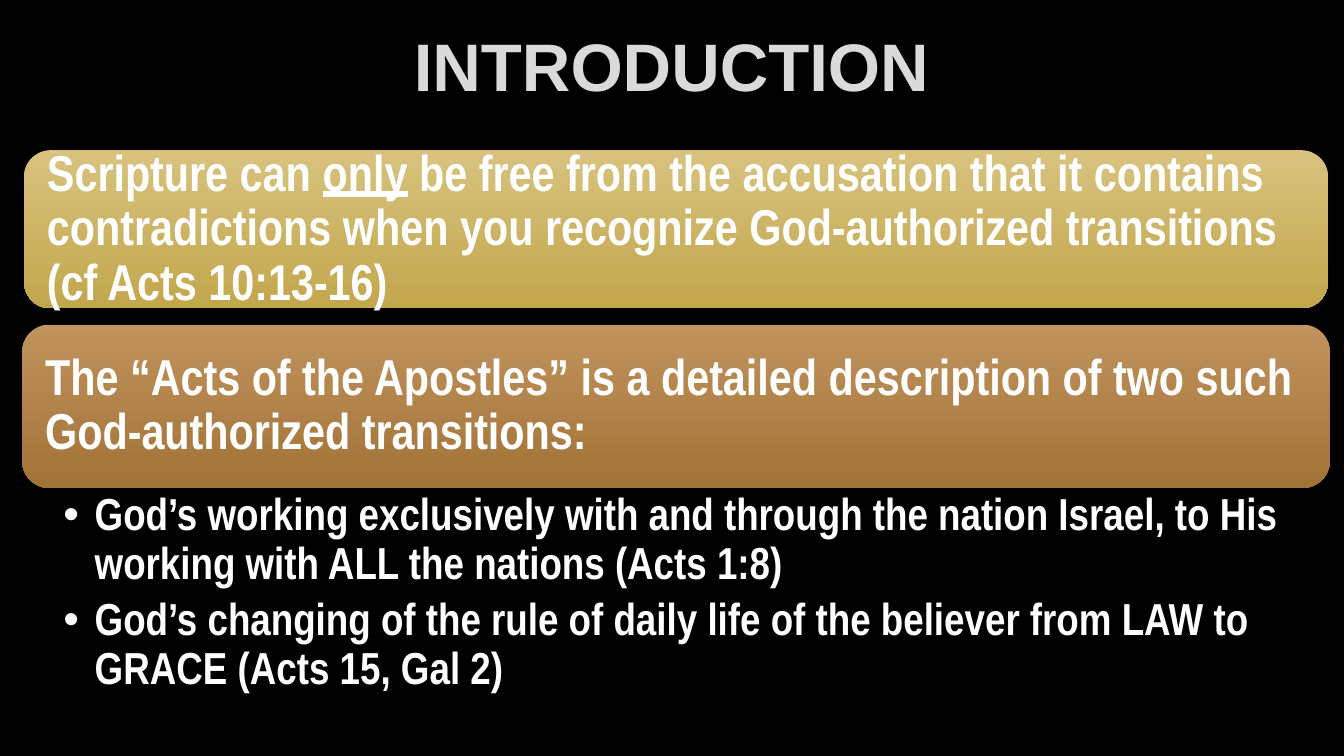
from lxml import etree
from pptx import Presentation, util as u
from pptx.dml.color import RGBColor
from pptx.enum import shapes, text
from pptx.oxml.ns import qn

WIDTH, HEIGHT = 13.33, 7.5
WHITE = "FFFFFF"
GOLD = ("D8C27E", "C2A74D")
BRONZE = ("C1935D", "A17337")

CLAIM = [
    ("Scripture can ", False),
    ("only", True),
    (" be free from the accusation that it contains contradictions when you "
     "recognize God-authorized transitions (cf Acts 10:13-16)", False),
]
ACTS = [("The “Acts of the Apostles” is a detailed description of two such "
         "God-authorized transitions:", False)]
TRANSITIONS = [
    "God’s working exclusively with and through the nation Israel, to His "
    "working with ALL the nations (Acts 1:8)",
    "God’s changing of the rule of daily life of the believer from LAW to "
    "GRACE (Acts 15, Gal 2)",
]


def color(value):
    return RGBColor.from_string(value)


def inches(box):
    return [u.Inches(length) for length in box]


def add_run(paragraph, words, size, font="Arial Narrow", fill=WHITE, underline=False):
    run = paragraph.add_run()
    run.text = words
    run.font.name = font
    run.font.size = u.Pt(size)
    run.font.bold = True
    run.font.color.rgb = color(fill)
    if underline:
        run.font.underline = True


def set_frame(frame, anchor, insets):
    frame.word_wrap = True
    frame.auto_size = text.MSO_AUTO_SIZE.NONE
    frame.vertical_anchor = anchor
    (frame.margin_left, frame.margin_top,
     frame.margin_right, frame.margin_bottom) = inches(insets)


def add_title(slide, box, words):
    title = slide.shapes.title
    title.left, title.top, title.width, title.height = inches(box)
    set_frame(title.text_frame, text.MSO_ANCHOR.MIDDLE, (0.1, 0.05, 0.1, 0.05))
    paragraph = title.text_frame.paragraphs[0]
    paragraph.alignment = text.PP_ALIGN.CENTER
    add_run(paragraph, words, 48, font="Arial", fill="DADADA")


def add_banner(slide, box, runs, gradient):
    """Rounded panel with a top-to-bottom gradient and left-aligned text."""
    banner = slide.shapes.add_shape(shapes.MSO_SHAPE.ROUNDED_RECTANGLE, *inches(box))
    banner.shadow.inherit = False
    banner.line.fill.background()
    banner.fill.gradient()
    banner.fill.gradient_angle = 270
    for stop, value, position in zip(banner.fill.gradient_stops, gradient, (0, 1)):
        stop.color.rgb = color(value)
        stop.position = position
    set_frame(banner.text_frame, text.MSO_ANCHOR.MIDDLE, [0.15] * 4)
    paragraph = banner.text_frame.paragraphs[0]
    paragraph.alignment = text.PP_ALIGN.LEFT
    paragraph.line_spacing = 0.9
    for words, underline in runs:
        add_run(paragraph, words, 36, underline=underline)


def add_bullets(slide, box, items):
    frame = slide.shapes.add_textbox(*inches(box)).text_frame
    set_frame(frame, text.MSO_ANCHOR.TOP, (0.41, 0.04, 0.25, 0.04))
    for index, item in enumerate(items):
        paragraph = frame.add_paragraph() if index else frame.paragraphs[0]
        paragraph.line_spacing = 0.9
        paragraph.space_after = u.Pt(6)
        add_run(paragraph, item, 32)
        properties = paragraph._p.get_or_add_pPr()
        indent = u.Inches(0.31)
        properties.set("marL", str(indent))
        properties.set("indent", str(-indent))
        etree.SubElement(properties, qn("a:buFont")).set("typeface", "Arial")
        etree.SubElement(properties, qn("a:buChar")).set("char", "•")


def main():
    presentation = Presentation()
    presentation.slide_width, presentation.slide_height = inches((WIDTH, HEIGHT))
    slide = presentation.slides.add_slide(presentation.slide_layouts[5])
    slide.background.fill.solid()
    slide.background.fill.fore_color.rgb = color("000000")

    add_title(slide, (1, 0.11, 11.32, 1.06), "INTRODUCTION")
    add_banner(slide, (0.24, 1.49, 12.93, 1.57), CLAIM, GOLD)
    add_banner(slide, (0.22, 3.22, 12.97, 1.62), ACTS, BRONZE)
    add_bullets(slide, (0.22, 4.84, 12.97, 2.64), TRANSITIONS)
    presentation.save("out.pptx")


if __name__ == "__main__":
    main()
